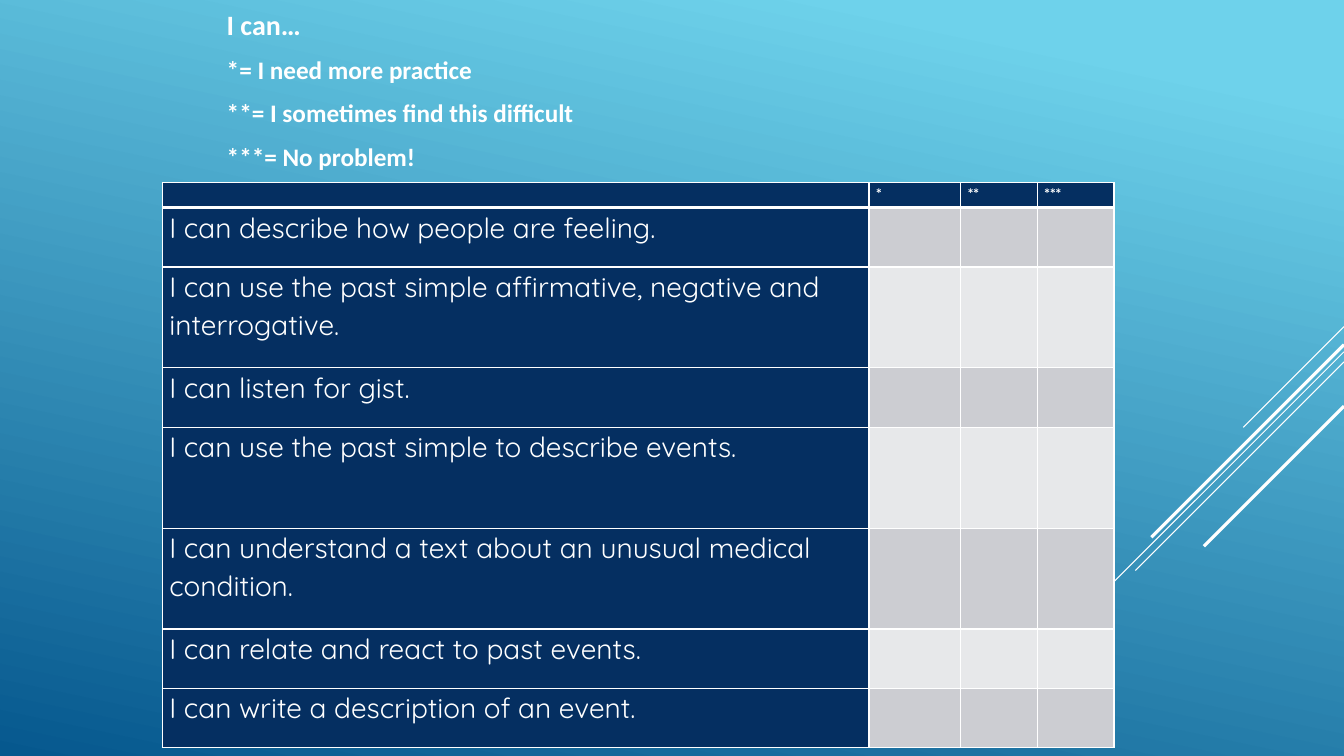
"""Build a self-assessment slide with an "I can" checklist table."""
from lxml import etree
from pptx import Presentation
from pptx import util as u
from pptx.dml.color import RGBColor
from pptx.enum import shapes
from pptx.oxml import ns

WHITE = RGBColor(0xFF, 0xFF, 0xFF)
NAVY = RGBColor(0x05, 0x2F, 0x61)
GREY = RGBColor(0xCC, 0xCD, 0xD2)
PALE = RGBColor(0xE7, 0xE8, 0xEA)
SKY = RGBColor(0x6E, 0xD2, 0xEB)
DEEP = RGBColor(0x06, 0x58, 0x8E)

SLIDE_WIDTH, SLIDE_HEIGHT = 13.33, 7.5
DIAGONALS = [(3.24, 1.0, 0.75), (3.49, 3.26, 0.75), (3.59, 2.07, 0.75),
             (3.42, 1.91, 2.25), (4.03, 1.39, 2.25)]
KEY = [("I can…", 20), ("*= I need more practice", 18),
       ("**= I sometimes find this difficult", 18), ("***= No problem!", 18)]
COLUMNS = [7.01, 0.91, 0.76, 0.76]
HEADER = ["", "*", "**", "***"]
HEADER_HEIGHT = 0.25
GOALS = [("I can describe how people are feeling.", 0.59),
         ("I can use the past simple affirmative, negative and interrogative.", 1),
         ("I can listen for gist.", 0.59),
         ("I can use the past simple to describe events.", 1),
         ("I can understand a text about an unusual medical condition.", 1),
         ("I can relate and react to past events.", 0.59),
         ("I can write a description of an event.", 0.59)]


class SlideBuilder:
    """Hold the text style and the current slide."""

    def __init__(self, deck):
        self.slide = deck.slides.add_slide(deck.slide_layouts[6])
        self.spacing = 1.07

    def background(self, colours, positions, angle):
        """Fill the background with a linear gradient."""
        fill = self.slide.background.fill
        fill.gradient()
        fill.gradient_angle = angle
        for stop, colour, position in zip(fill.gradient_stops, colours, positions):
            stop.color.rgb = colour
            stop.position = position

    def diagonal(self, top, run, width):
        """Draw a line going down and left from the right edge at 45 degrees."""
        ends = (SLIDE_WIDTH, top, SLIDE_WIDTH - run, top + run)
        line = self.slide.shapes.add_connector(
            shapes.MSO_CONNECTOR.STRAIGHT, *map(u.Inches, ends))
        line.line.color.rgb = WHITE
        line.line.width = u.Pt(width)
        properties = line._element.find(ns.qn("p:spPr"))
        etree.SubElement(properties, ns.qn("a:effectLst"))

    def add_span(self, para, text, **formats):
        """Add one formatted span to a paragraph."""
        para.line_spacing = self.spacing
        span = para.add_run()
        span.text = text
        span.font.color.rgb = WHITE
        for name, value in formats.items():
            setattr(span.font, name, value)

    def text(self, place, lines):
        """Add a text box with one bold paragraph for each line."""
        box = self.slide.shapes.add_textbox(*map(u.Inches, place))
        frame = box.text_frame
        frame.word_wrap = True
        for index, (line, size) in enumerate(lines):
            para = frame.add_paragraph() if index else frame.paragraphs[0]
            para.space_after = u.Pt(8)
            self.add_span(para, line, name="Calibri", size=u.Pt(size), bold=True)

    def cell(self, cell, text, size, fill, bold=False, top=1, bottom=1):
        """Format one table cell."""
        margins = {"margin_left": 0.07, "margin_right": 0.07,
                   "margin_top": 0, "margin_bottom": 0}
        for name, value in margins.items():
            setattr(cell, name, u.Inches(value))
        properties = cell._tc.get_or_add_tcPr()
        for side, width in {"L": 1, "R": 1, "T": top, "B": bottom}.items():
            border = etree.SubElement(properties, ns.qn(f"a:ln{side}"), w=str(u.Pt(width)))
            paint = etree.SubElement(border, ns.qn("a:solidFill"))
            etree.SubElement(paint, ns.qn("a:srgbClr"), val=str(WHITE))
        cell.fill.solid()
        cell.fill.fore_color.rgb = fill
        para = cell.text_frame.paragraphs[0]
        if text:
            self.add_span(para, text, name="Quicksand", size=u.Pt(size), bold=bold)
        else:
            etree.SubElement(para._p, ns.qn("a:endParaRPr"), sz=str(size * 100))

    def checklist(self, left, top):
        """Add the table of goals with one empty column for each rating."""
        heights = [HEADER_HEIGHT] + [height for _, height in GOALS]
        place = (left, top, sum(COLUMNS), sum(heights))
        table = self.slide.shapes.add_table(
            len(heights), len(COLUMNS), *map(u.Inches, place)).table
        for column, width in zip(table.columns, COLUMNS):
            column.width = u.Inches(width)
        for row, height in zip(table.rows, heights):
            row.height = u.Inches(height)
        for index, mark in enumerate(HEADER):
            self.cell(table.cell(0, index), mark, 11, NAVY, bold=True, bottom=3)
        for number, (goal, _) in enumerate(GOALS, 1):
            edge = 3 if number == 1 else 1
            self.cell(table.cell(number, 0), goal, 20, NAVY, top=edge)
            for index in range(1, len(COLUMNS)):
                self.cell(table.cell(number, index), "", 11,
                          GREY if number % 2 else PALE, top=edge)


def main():
    """Build and save the deck."""
    deck = Presentation()
    deck.slide_width = u.Inches(SLIDE_WIDTH)
    deck.slide_height = u.Inches(SLIDE_HEIGHT)
    page = SlideBuilder(deck)
    page.background([SKY, DEEP], [0.1, 1], 258)
    for diagonal in DIAGONALS:
        page.diagonal(*diagonal)
    page.checklist(1.61, 1.81)
    page.text((2.15, 0, 7.85, 1.76), KEY)
    deck.save("out.pptx")


if __name__ == "__main__":
    main()
